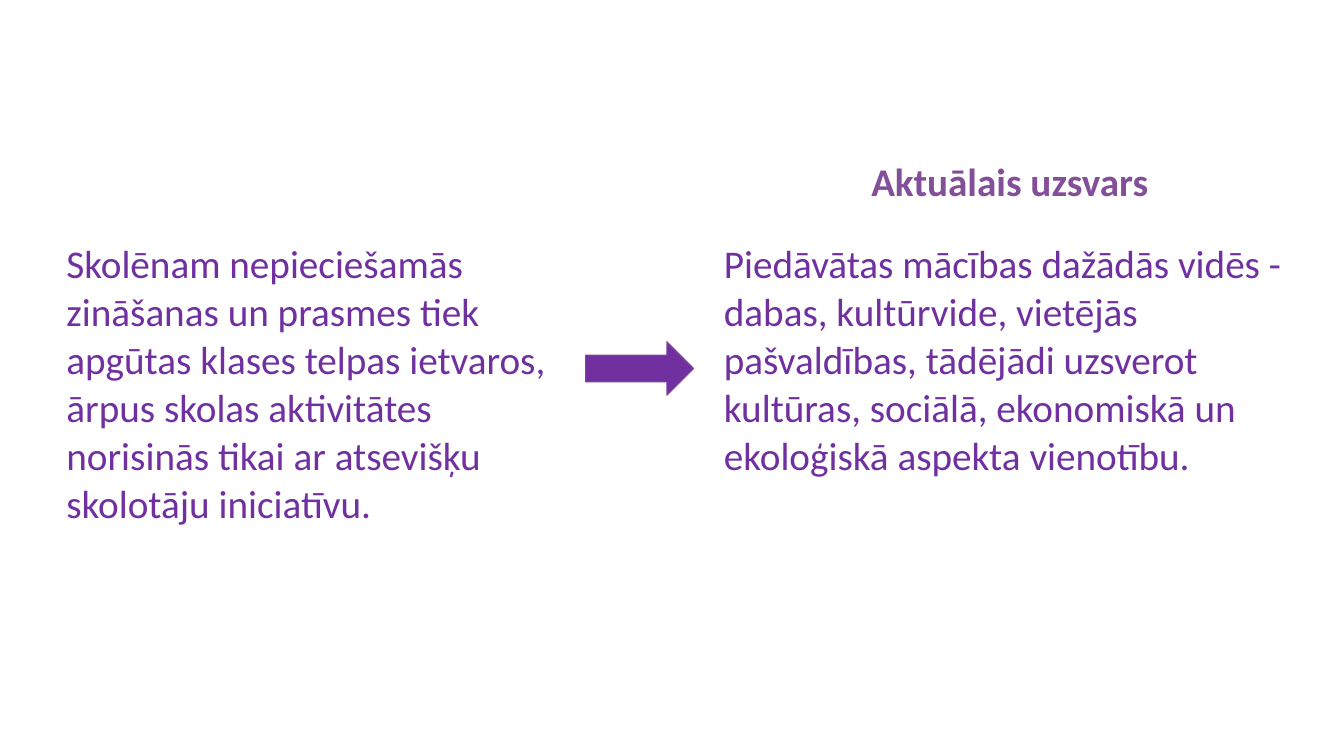
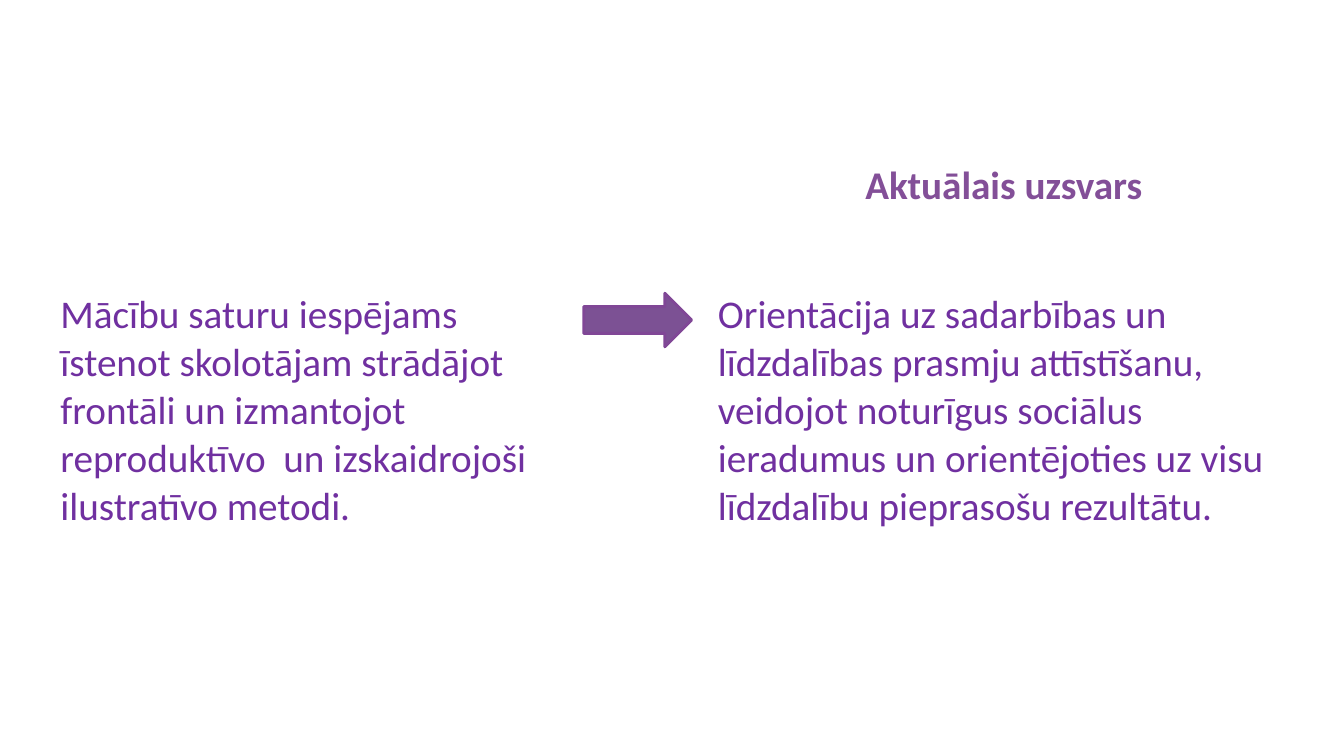
from pptx import Presentation
from pptx.dml.color import RGBColor
from pptx.enum.shapes import MSO_SHAPE
from pptx.enum.text import MSO_ANCHOR, PP_ALIGN
from pptx.util import Cm, Pt

HEADING_PURPLE = RGBColor(0x83, 0x4F, 0x98)
BODY_PURPLE = RGBColor(0x70, 0x30, 0xA0)
MUTED_PURPLE = RGBColor(0x7C, 0x51, 0x94)
OUTLINE_PURPLE = RGBColor(0x80, 0x47, 0x96)

FONT = {"name": "Calibri", "size": Pt(28)}
HEADING_FONT = {**FONT, "bold": True}
BODY_FONT = {**FONT, "bold": False}

COLUMN_WIDTHS = (13.34, 3.23, 14.91)
ARROW_SIZE = (2.72, 1.35)
HEADING = "Aktuālais uzsvars"

SLIDES = [
    {
        "before": "Skolēnam nepieciešamās zināšanas un prasmes tiek apgūtas "
                  "klases telpas ietvaros, ārpus skolas aktivitātes norisinās "
                  "tikai ar atsevišķu skolotāju iniciatīvu.",
        "after": "Piedāvātas mācības dažādās vidēs - dabas, kultūrvide, "
                 "vietējās pašvaldības, tādējādi uzsverot kultūras, sociālā, "
                 "ekonomiskā un ekoloģiskā aspekta vienotību.",
        "table_at": (1.42, 3.89),
        "row_heights": (1.78, 9.63),
        "body_margin": 0.41,
        "arrow_at": (14.76, 8.61),
        "arrow_fill": BODY_PURPLE,
        "arrow_line": 0.75,
    },
    {
        "before": "Mācību saturu iespējams īstenot skolotājam strādājot "
                  "frontāli un izmantojot reproduktīvo  un izskaidrojoši "
                  "ilustratīvo metodi.",
        "after": "Orientācija uz sadarbības un līdzdalības prasmju "
                 "attīstīšanu, veidojot noturīgus sociālus ieradumus un "
                 "orientējoties uz visu līdzdalību pieprasošu rezultātu.",
        "table_at": (1.27, 3.96),
        "row_heights": (1.65, 8.36),
        "body_margin": 1.73,
        "arrow_at": (14.71, 7.39),
        "arrow_fill": MUTED_PURPLE,
        "arrow_line": 2,
    },
]


def set_values(target, values):
    for name, value in values.items():
        setattr(target, name, value)


def fill_cell(cell, text, font, color, align=PP_ALIGN.LEFT, margin_top=0.13):
    set_values(cell, {
        "text": text,
        "vertical_anchor": MSO_ANCHOR.TOP,
        "margin_top": Cm(margin_top),
    })
    paragraph = cell.text_frame.paragraphs[0]
    paragraph.alignment = align
    set_values(paragraph.font, font)
    paragraph.font.color.rgb = color


def add_comparison(slide, content):
    left, top = content["table_at"]
    heights = content["row_heights"]
    frame = slide.shapes.add_table(
        len(heights), len(COLUMN_WIDTHS), Cm(left), Cm(top),
        Cm(sum(COLUMN_WIDTHS)), Cm(sum(heights)))
    table = frame.table
    set_values(table, {"first_row": False, "horz_banding": False})
    for column, width in zip(table.columns, COLUMN_WIDTHS):
        column.width = Cm(width)
    for row, height in zip(table.rows, heights):
        row.height = Cm(height)
    for cell in table.iter_cells():
        cell.fill.background()

    fill_cell(table.cell(0, 2), HEADING, HEADING_FONT, HEADING_PURPLE,
              PP_ALIGN.CENTER)
    for column, side in ((0, "before"), (2, "after")):
        fill_cell(table.cell(1, column), content[side], BODY_FONT, BODY_PURPLE,
                  margin_top=content["body_margin"])


def add_arrow(slide, content):
    bounds = map(Cm, content["arrow_at"] + ARROW_SIZE)
    arrow = slide.shapes.add_shape(MSO_SHAPE.RIGHT_ARROW, *bounds)
    arrow.shadow.inherit = False
    arrow.fill.solid()
    arrow.fill.fore_color.rgb = content["arrow_fill"]
    arrow.line.color.rgb = OUTLINE_PURPLE
    arrow.line.width = Pt(content["arrow_line"])


def main():
    presentation = Presentation()
    set_values(presentation,
               {"slide_width": Cm(33.87), "slide_height": Cm(19.05)})
    for content in SLIDES:
        slide = presentation.slides.add_slide(presentation.slide_layouts[6])
        add_comparison(slide, content)
        add_arrow(slide, content)
    presentation.save("out.pptx")


if __name__ == "__main__":
    main()
